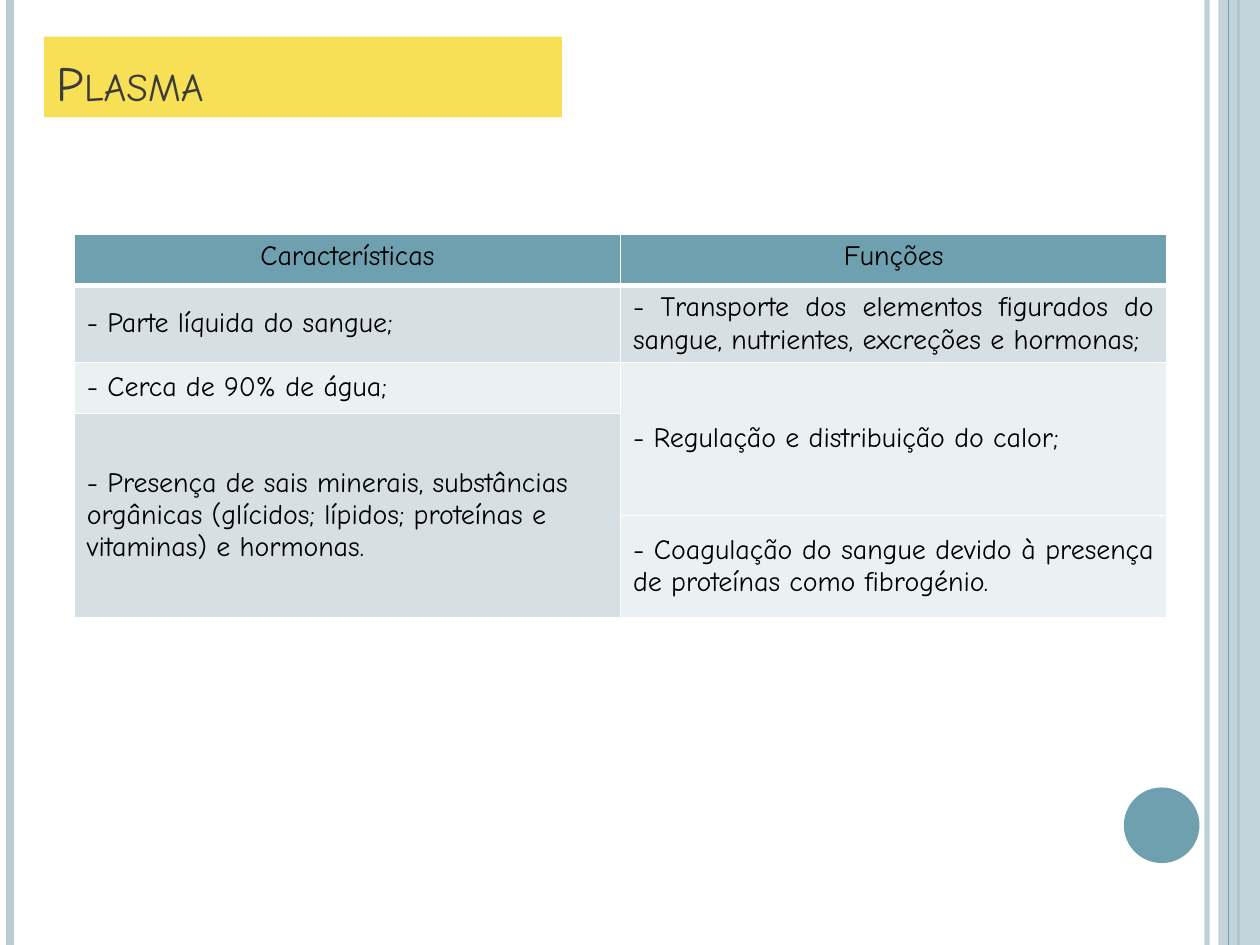
"""Build the Plasma slide: title, table of traits and functions, side stripes."""
from dataclasses import dataclass

from lxml.etree import SubElement
from pptx import Presentation
from pptx.dml.color import RGBColor
from pptx.enum.shapes import MSO_CONNECTOR, MSO_SHAPE
from pptx.enum.text import MSO_ANCHOR, MSO_AUTO_SIZE, PP_ALIGN
from pptx.oxml.ns import qn
from pptx.util import Inches, Pt

WIDTH, HEIGHT = Inches(10), Inches(7.5)
FONT = "Comic Neue"
TEAL, PALE, YELLOW = "6EA0B0", "BACDD4", "F7DF56"
BAND_DARK, BAND_LIGHT = "D5DFE4", "EBF0F2"
WHITE, BLACK, GREY = "FFFFFF", "000000", "3B3B3B"
ROW_UNIT = Inches(0.405)
ROW_UNITS = (1, 1, 1, 2, 2)


@dataclass(frozen=True)
class Stripe:
    """A full-height line at a share of the slide's width."""
    share: float
    color: str
    weight: float
    opacity: int = 100


@dataclass(frozen=True)
class Entry:
    """A table cell at a grid row and column."""
    row: int
    column: int
    text: str
    fill: str
    align: PP_ALIGN = PP_ALIGN.LEFT
    rows: int = 1


LEFT_AND_RIGHT_EDGES = (
    Stripe(0.958, PALE, 3, 93),
    Stripe(0.008, PALE, 4.5),
    Stripe(0.983, TEAL, 1.5),
)
INNER_STRIPE = Stripe(0.975, TEAL, 0.75)
ENTRIES = (
    Entry(0, 0, "Características", TEAL, PP_ALIGN.CENTER),
    Entry(0, 1, "Funções", TEAL, PP_ALIGN.CENTER),
    Entry(1, 0, "- Parte líquida do sangue;", BAND_DARK),
    Entry(1, 1, "- Transporte dos elementos figurados do sangue, nutrientes, "
          "excreções e hormonas;", BAND_DARK, PP_ALIGN.JUSTIFY),
    Entry(2, 0, "- Cerca de 90% de água;", BAND_LIGHT),
    Entry(2, 1, "- Regulação e distribuição do calor;", BAND_LIGHT, PP_ALIGN.JUSTIFY, 2),
    Entry(3, 0, "- Presença de sais minerais, substâncias orgânicas (glícidos; "
          "lípidos; proteínas e vitaminas) e hormonas.", BAND_DARK, rows=2),
    Entry(4, 1, "- Coagulação do sangue devido à presença de proteínas como "
          "fibrogénio.", BAND_LIGHT, PP_ALIGN.JUSTIFY),
)


def paint(target, color: str, opacity: int = 100) -> None:
    """Give a fill a solid colour and, if needed, transparency."""
    target.solid()
    target.fore_color.rgb = RGBColor.from_string(color)
    if opacity < 100:
        tint = target._xPr.find(qn("a:solidFill"))[0]
        SubElement(tint, qn("a:alpha"), val=str(opacity * 1000))


def style_text(frame, size: float, color: str, align: PP_ALIGN) -> None:
    """Format every run of a text frame."""
    for para in frame.paragraphs:
        para.alignment = align
        for span in para.runs:
            span.font.name = FONT
            span.font.size = Pt(size)
            span.font.color.rgb = RGBColor.from_string(color)


def draw_stripe(page, stripe: Stripe) -> None:
    """Draw one vertical stripe from top to bottom."""
    x = round(WIDTH * stripe.share)
    line = page.shapes.add_connector(MSO_CONNECTOR.STRAIGHT, x, 0, x, HEIGHT)
    line.line.width = Pt(stripe.weight)
    paint(line.line.fill, stripe.color, stripe.opacity)
    SubElement(line._element.spPr, qn("a:effectLst"))


def draw_shape(page, kind: MSO_SHAPE, at: tuple, color: str, opacity: int = 100) -> None:
    """Draw a borderless preset shape placed in inches."""
    shape = page.shapes.add_shape(kind, *map(Inches, at))
    shape.shadow.inherit = False
    shape.line.fill.background()
    paint(shape.fill, color, opacity)


def draw_title(page, text: str) -> None:
    """Fill and place the title placeholder."""
    title = page.shapes.title
    title.left, title.top, title.width, title.height = map(Inches, (0.35, 0.29, 4.11, 0.64))
    paint(title.fill, YELLOW)
    frame = title.text_frame
    frame.text = text
    frame.auto_size = MSO_AUTO_SIZE.NONE
    frame.vertical_anchor = MSO_ANCHOR.BOTTOM
    style_text(frame, 28, GREY, PP_ALIGN.LEFT)
    frame.paragraphs[0].runs[0].font._element.set("cap", "small")


def border_cell(cell, bottom: float) -> None:
    """Put white borders ahead of the cell's fill."""
    properties = cell._tc.get_or_add_tcPr()
    for index, (side, weight) in enumerate(zip("LRTB", (1, 1, 1, bottom))):
        edge = SubElement(properties, qn(f"a:ln{side}"), w=str(Pt(weight)))
        solid = SubElement(edge, qn("a:solidFill"))
        SubElement(solid, qn("a:srgbClr"), val=WHITE)
        properties.insert(index, edge)


def draw_table(page) -> None:
    """Draw the two-column table with its merged cells."""
    box = page.shapes.add_table(len(ROW_UNITS), 2, Inches(0.59), Inches(1.86),
                                Inches(8.67), Inches(3.42))
    table = box.table
    for row, units in zip(table.rows, ROW_UNITS):
        row.height = ROW_UNIT * units
    box.height = Inches(3.42)
    for entry in ENTRIES:
        cell = table.cell(entry.row, entry.column)
        if entry.rows > 1:
            cell.merge(table.cell(entry.row + entry.rows - 1, entry.column))
        header = entry.row == 0
        cell.text_frame.text = entry.text
        cell.vertical_anchor = MSO_ANCHOR.TOP if header else MSO_ANCHOR.MIDDLE
        style_text(cell.text_frame, 16, BLACK, entry.align)
        paint(cell.fill, entry.fill)
        border_cell(cell, 3 if header else 1)


def main() -> None:
    """Assemble and save the deck."""
    deck = Presentation()
    deck.slide_width, deck.slide_height = WIDTH, HEIGHT
    page = deck.slides.add_slide(deck.slide_layouts[5])
    for stripe in LEFT_AND_RIGHT_EDGES:
        draw_stripe(page, stripe)
    draw_shape(page, MSO_SHAPE.RECTANGLE, (9.67, 0, 0.33, 7.5), PALE, 87)
    draw_stripe(page, INNER_STRIPE)
    draw_shape(page, MSO_SHAPE.OVAL, (8.92, 6.25, 0.6, 0.6), TEAL)
    draw_table(page)
    draw_title(page, "Plasma")
    deck.save("out.pptx")


if __name__ == "__main__":
    main()
